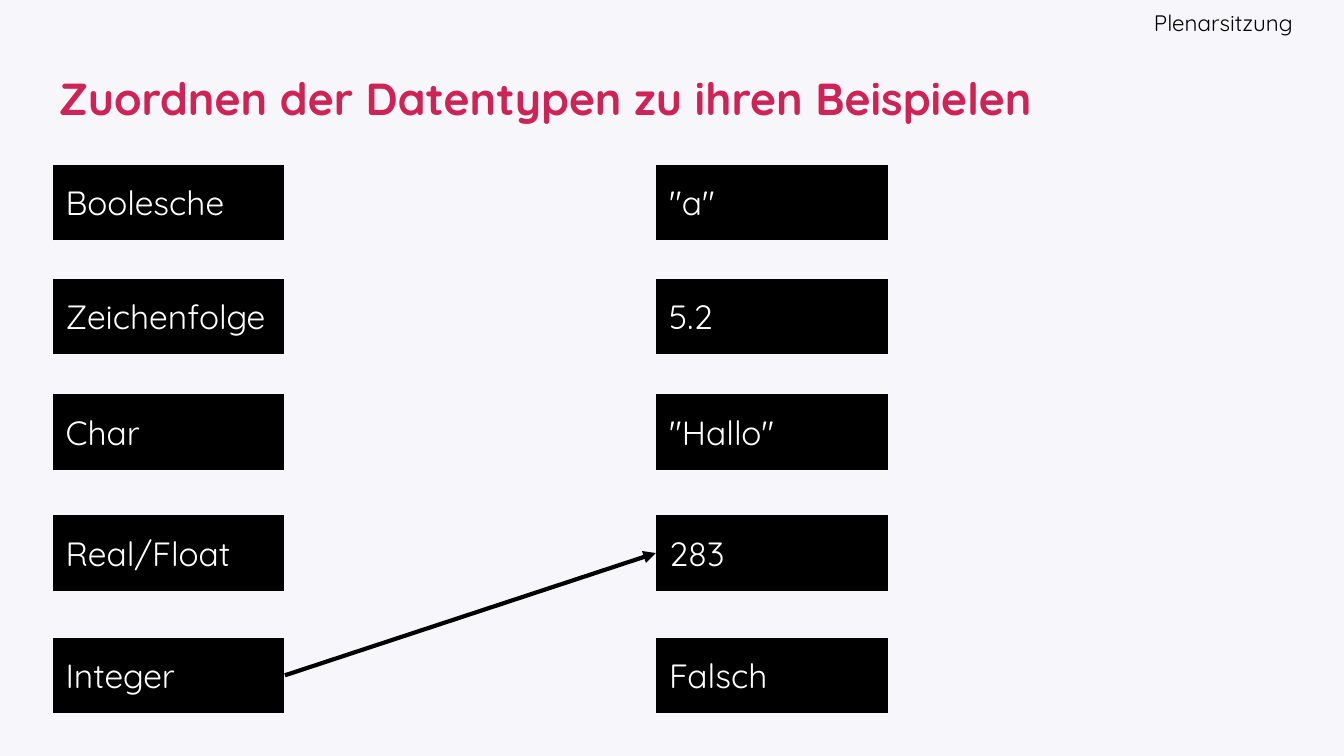
from pptx import Presentation
from pptx.dml.color import RGBColor
from pptx.enum.shapes import MSO_CONNECTOR as Connector, MSO_SHAPE as Shape
from pptx.enum.text import MSO_ANCHOR as Anchor, PP_ALIGN as Align
from pptx.oxml.ns import qn
from pptx.util import Inches, Pt
from lxml.etree import SubElement

BACKGROUND = RGBColor(0xF7, 0xF6, 0xFB)
CRIMSON = RGBColor(0xCD, 0x23, 0x55)
BLACK = RGBColor(0, 0, 0)
WHITE = RGBColor(0xFF, 0xFF, 0xFF)
FONT = "Quicksand"

TYPES = ["Boolesche", "Zeichenfolge", "Char", "Real/Float", "Integer"]
EXAMPLES = ['"a"', "5.2", '"Hallo"', "283", "Falsch"]
TYPES_LEFT, EXAMPLES_LEFT = 0.39, 4.88
ROW_TOPS = [1.22, 2.07, 2.93, 3.83, 4.74]
CARD_WIDTH, CARD_HEIGHT = 1.73, 0.57
LEFT_SIDE, RIGHT_SIDE = 1, 3


def write_text(box, text, size, color, bold=False, align=Align.LEFT, right_inset=0.1):
    frame = box.text_frame
    frame.word_wrap = True
    frame.vertical_anchor = Anchor.MIDDLE
    frame.margin_left = frame.margin_top = frame.margin_bottom = Inches(0.1)
    frame.margin_right = Inches(right_inset)
    para = frame.paragraphs[0]
    para.text = text
    para.alignment = align
    para.font.name = FONT
    para.font.size = Pt(size)
    para.font.bold = bold
    para.font.color.rgb = color


def add_label(page, left, top, width, height, *text, **style):
    box = page.shapes.add_textbox(Inches(left), Inches(top), Inches(width), Inches(height))
    write_text(box, *text, **style)


def add_card(page, left, top, text):
    card = page.shapes.add_shape(
        Shape.RECTANGLE, Inches(left), Inches(top), Inches(CARD_WIDTH), Inches(CARD_HEIGHT))
    card.shadow.inherit = False
    card.fill.solid()
    card.fill.fore_color.rgb = BLACK
    card.line.color.rgb = BACKGROUND
    card.line.width = Pt(0.75)
    write_text(card, text, 18, WHITE)
    return card


def add_column(page, left, texts):
    return {text: add_card(page, left, top, text) for top, text in zip(ROW_TOPS, texts)}


def add_arrow(page, source, target):
    arrow = page.shapes.add_connector(Connector.STRAIGHT, 0, 0, 0, 0)
    arrow.begin_connect(source, RIGHT_SIDE)
    arrow.end_connect(target, LEFT_SIDE)
    arrow.line.color.rgb = BLACK
    arrow.line.width = Pt(2.25)
    SubElement(arrow.line._get_or_add_ln(), qn("a:tailEnd"), type="triangle")
    SubElement(arrow._element.spPr, qn("a:effectLst"))


def main():
    # Widescreen 16:9 page
    deck = Presentation()
    deck.slide_width = Inches(10)
    deck.slide_height = Inches(10 * 9 / 16)
    page = deck.slides.add_slide(deck.slide_layouts[6])
    page.background.fill.solid()
    page.background.fill.fore_color.rgb = BACKGROUND

    # Title and session label
    add_label(page, 0.34, 0.34, 9.32, 0.77,
              "Zuordnen der Datentypen zu ihren Beispielen", 24, CRIMSON, bold=True)
    add_label(page, 7.48, 0, 2.14, 0.34,
              "Plenarsitzung", 12, BLACK, align=Align.RIGHT, right_inset=0)

    # Data types on the left, examples on the right
    types = add_column(page, TYPES_LEFT, TYPES)
    examples = add_column(page, EXAMPLES_LEFT, EXAMPLES)

    # Solved match
    add_arrow(page, types["Integer"], examples["283"])

    deck.save("out.pptx")


if __name__ == "__main__":
    main()
